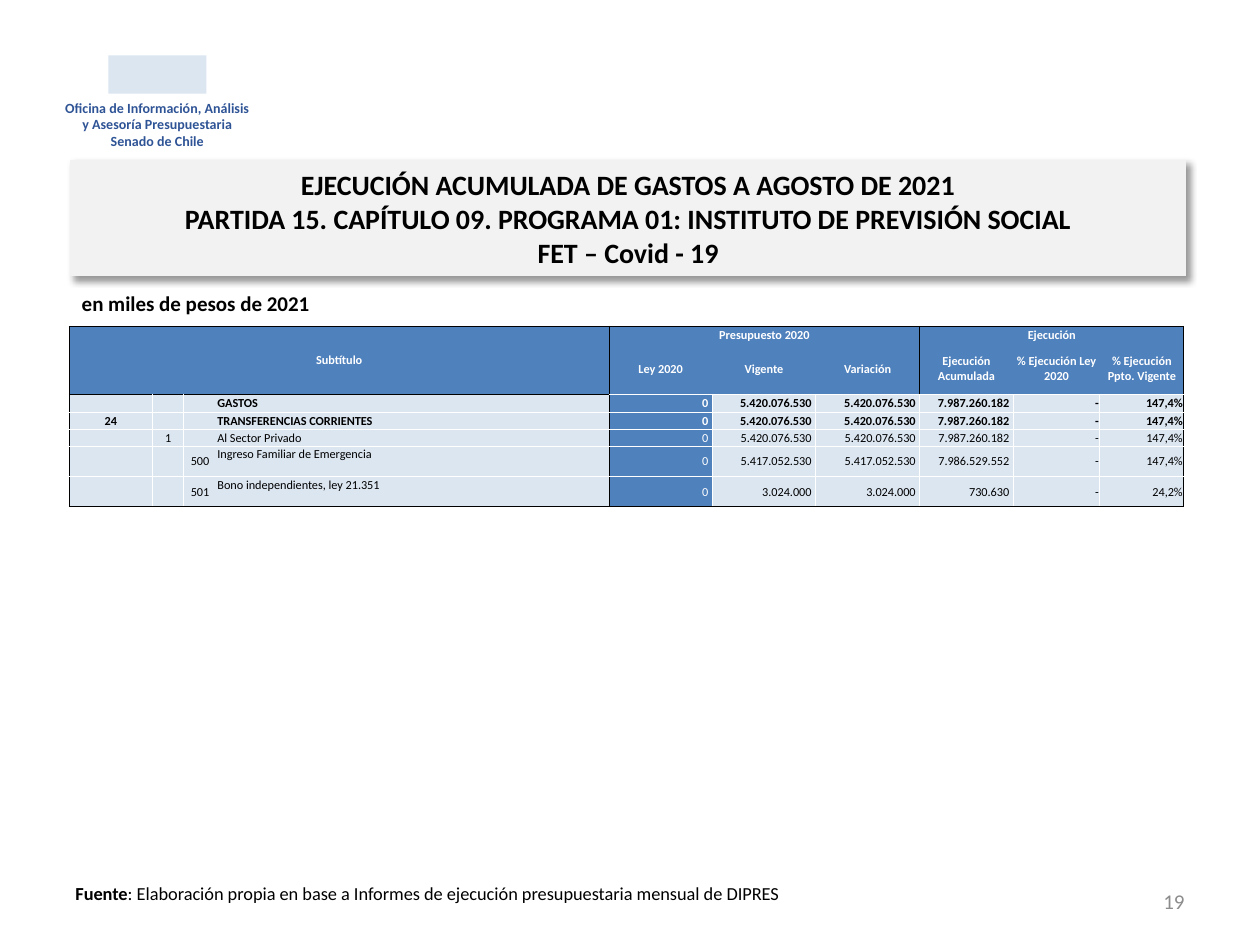
from lxml.etree import SubElement
from pptx import Presentation
from pptx.dml.color import RGBColor
from pptx.enum.shapes import MSO_SHAPE
from pptx.enum.text import MSO_ANCHOR, PP_ALIGN
from pptx.oxml.ns import qn
from pptx.util import Pt

COLORS = {
    "white": "FFFFFF", "black": "000000", "navy": "2F5496", "title": "F2F2F2",
    "header": "4F81BD", "body": "DCE6F1", "number": "8C8C8C",
}
COLUMN_WIDTHS = [47.5, 18, 18.5, 224.5, 59, 59, 59.5, 53.5, 49.5, 48]
ROW_HEIGHTS = [9.4, 29.5, 10.3, 10, 9.3, 17.5, 17.3]
LEY_COLUMN = 4
# Merged headings: first row, first column, last row, last column, text
HEADINGS = [
    (0, 0, 1, 3, "Subtítulo"),
    (0, 4, 0, 6, "Presupuesto 2020"),
    (0, 7, 0, 9, "Ejecución"),
]
ROWS = [
    ["", "", "", "", "Ley 2020", "Vigente", "Variación", "Ejecución Acumulada",
     "% Ejecución Ley 2020", "% Ejecución Ppto. Vigente"],
    ["", "", "", "GASTOS", "0", "5.420.076.530", "5.420.076.530",
     "7.987.260.182", "-", "147,4%"],
    ["24", "", "", "TRANSFERENCIAS CORRIENTES", "0", "5.420.076.530",
     "5.420.076.530", "7.987.260.182", "-", "147,4%"],
    ["", "1", "", "Al Sector Privado", "0", "5.420.076.530", "5.420.076.530",
     "7.987.260.182", "-", "147,4%"],
    ["", "", "500", "Ingreso Familiar de Emergencia", "0", "5.417.052.530",
     "5.417.052.530", "7.986.529.552", "-", "147,4%"],
    ["", "", "501", "Bono independientes, ley 21.351", "0", "3.024.000",
     "3.024.000", "730.630", "-", "24,2%"],
]


def rgb(name):
    return RGBColor.from_string(COLORS[name])


def style(paragraph, size, color, bold=False, align=PP_ALIGN.LEFT):
    paragraph.alignment = align
    paragraph.font.name = "Calibri"
    paragraph.font.size = Pt(size)
    paragraph.font.bold = bold
    paragraph.font.color.rgb = rgb(color)


def add_box(slide, box, fill):
    shape = slide.shapes.add_shape(MSO_SHAPE.RECTANGLE, *map(Pt, box))
    shape.shadow.inherit = False
    shape.fill.solid()
    shape.fill.fore_color.rgb = rgb(fill)
    shape.line.fill.background()
    shape.text_frame.word_wrap = True
    return shape


def add_line_of_text(slide, box, anchor=MSO_ANCHOR.TOP):
    frame = slide.shapes.add_textbox(*map(Pt, box)).text_frame
    frame.word_wrap = True
    frame.vertical_anchor = anchor
    return frame.paragraphs[0]


def add_letterhead(slide, box):
    left, top, width, height = box
    frame = add_box(slide, box, "white").text_frame
    frame.vertical_anchor = MSO_ANCHOR.BOTTOM
    frame.text = ("Oficina de Información, Análisis y Asesoría Presupuestaria\n"
                  "Senado de Chile")
    for paragraph in frame.paragraphs:
        style(paragraph, 8, "navy", True, PP_ALIGN.CENTER)
    # Plain emblem block above the office name
    emblem_width = 56
    add_box(slide, (left + (width - emblem_width) / 2, top + 10, emblem_width, 22), "body")


def add_title(slide, box):
    shape = add_box(slide, box, "title")
    shape.text_frame.vertical_anchor = MSO_ANCHOR.MIDDLE
    shape.line.color.rgb = rgb("title")
    shape.line.width = Pt(0.75)
    # Soft shadow towards the lower right
    effects = shape._element.spPr.find(qn("a:effectLst"))
    shadow = SubElement(effects, qn("a:outerShdw"), blurRad=str(Pt(4)), dist=str(Pt(3)),
                        dir="2700000", algn="tl", rotWithShape="0")
    color = SubElement(shadow, qn("a:srgbClr"), val=COLORS["black"])
    SubElement(color, qn("a:alpha"), val="40000")
    paragraph = shape.text_frame.paragraphs[0]
    paragraph.text = ("EJECUCIÓN ACUMULADA DE GASTOS A AGOSTO DE 2021\v"
                      "PARTIDA 15. CAPÍTULO 09. PROGRAMA 01: INSTITUTO DE PREVISIÓN SOCIAL\v"
                      "FET – Covid - 19")
    style(paragraph, 16, "black", True, PP_ALIGN.CENTER)


def vertical_border(line, row):
    if line in (0, 4, 10) or (line == 7 and row < 2):
        return "black"
    return None if line == 3 or row < 2 else "white"


def horizontal_border(line, column):
    if line in (0, 7) or (line == 2 and column < 4):
        return "black"
    return None if line < 2 else "white"


def draw_borders(cell, row, column):
    right = column + (cell.span_width if cell.is_merge_origin else 1)
    bottom = row + (cell.span_height if cell.is_merge_origin else 1)
    borders = {
        "a:lnL": vertical_border(column, row),
        "a:lnR": vertical_border(right, row),
        "a:lnT": horizontal_border(row, column),
        "a:lnB": horizontal_border(bottom, column),
    }
    properties = cell._tc.get_or_add_tcPr()
    for tag, color in borders.items():
        line = SubElement(properties, qn(tag), w=str(Pt(0.5)))
        if color:
            fill = SubElement(line, qn("a:solidFill"))
            SubElement(fill, qn("a:srgbClr"), val=COLORS[color])
        else:
            SubElement(line, qn("a:noFill"))


def format_cell(cell, row, column):
    draw_borders(cell, row, column)
    is_header = row < 2
    is_blue = is_header or column == LEY_COLUMN
    cell.fill.solid()
    cell.fill.fore_color.rgb = rgb("header" if is_blue else "body")
    cell.margin_left = cell.margin_top = Pt(0.7)
    cell.margin_right = Pt(2.3 if not is_header and 4 <= column <= 7 else 0.7)
    cell.margin_bottom = 0
    cell.vertical_anchor = MSO_ANCHOR.MIDDLE
    if row == 0 and column >= 4:
        cell.vertical_anchor = MSO_ANCHOR.BOTTOM
    elif row >= 5 and column == 3:
        cell.vertical_anchor = MSO_ANCHOR.TOP
    if is_header or column < 3:
        align = PP_ALIGN.CENTER
    else:
        align = PP_ALIGN.JUSTIFY if column == 3 else PP_ALIGN.RIGHT
    paragraph = cell.text_frame.paragraphs[0]
    style(paragraph, 7, "white" if is_blue else "black", row < 4, align)
    if not cell.text:
        # An empty cell needs its own size so that the row stays low
        SubElement(paragraph._p, qn("a:endParaRPr"), sz="700")


def add_budget_table(slide, box):
    table = slide.shapes.add_table(len(ROW_HEIGHTS), len(COLUMN_WIDTHS), *map(Pt, box)).table
    for column, width in zip(table.columns, COLUMN_WIDTHS):
        column.width = Pt(width)
    for row, height in zip(table.rows, ROW_HEIGHTS):
        row.height = Pt(height)
    for top, left, bottom, right, text in HEADINGS:
        table.cell(top, left).merge(table.cell(bottom, right))
        table.cell(top, left).text = text
    for row, values in enumerate(ROWS, start=1):
        for column, value in enumerate(values):
            if value:
                table.cell(row, column).text = value
    for row in range(len(ROW_HEIGHTS)):
        for column in range(len(COLUMN_WIDTHS)):
            format_cell(table.cell(row, column), row, column)


def add_unit_note(slide, box):
    paragraph = add_line_of_text(slide, box)
    paragraph.text = "en miles de pesos de 2021"
    style(paragraph, 12, "black", True)


def add_source_note(slide, box):
    paragraph = add_line_of_text(slide, box)
    style(paragraph, 10.5, "black")
    label = paragraph.add_run()
    label.text = "Fuente"
    label.font.bold = True
    paragraph.add_run().text = (": Elaboración propia en base a Informes de ejecución "
                                "presupuestaria mensual de DIPRES")


def add_slide_number(slide, box):
    paragraph = add_line_of_text(slide, box, MSO_ANCHOR.MIDDLE)
    paragraph.text = "19"
    style(paragraph, 12, "number", align=PP_ALIGN.RIGHT)


def main():
    presentation = Presentation()
    presentation.slide_width, presentation.slide_height = Pt(720), Pt(540)
    slide = presentation.slides.add_slide(presentation.slide_layouts[6])
    add_letterhead(slide, (28.4, 21.6, 123, 67.4))
    add_source_note(slide, (36, 500.4, 425.5, 20))
    add_title(slide, (40.3, 91.8, 637.2, 65.8))
    add_slide_number(slide, (516, 500.4, 168, 28.8))
    add_unit_note(slide, (39.6, 162.3, 638, 24.5))
    add_budget_table(slide, (39.6, 186.4, sum(COLUMN_WIDTHS), sum(ROW_HEIGHTS)))
    presentation.save("out.pptx")


if __name__ == "__main__":
    main()
